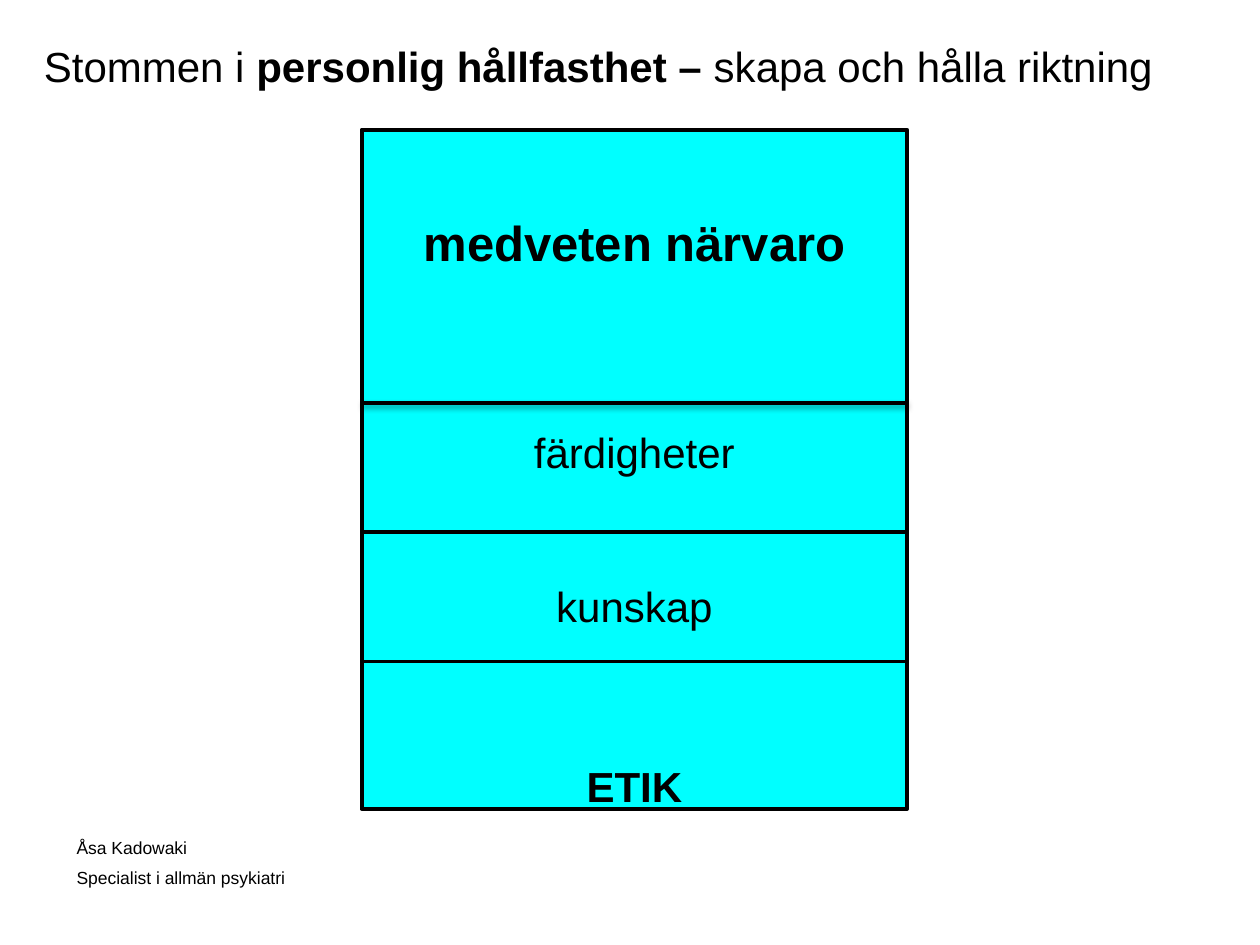
import pptx
import pptx.util
import pptx.dml.color
import pptx.enum.shapes
import pptx.enum.text
import pptx.oxml
import pptx.oxml.ns
from pptx.util import Inches

COLORS = {"ink": "000000", "block": "00FFFF"}
SHADOW = (
    '<a:outerShdw blurRad="39370" dist="20320" dir="5400000" rotWithShape="0">'
    '<a:srgbClr val="{}"><a:alpha val="38000"/></a:srgbClr></a:outerShdw>'
)


def color(name):
    return pptx.dml.color.RGBColor.from_string(COLORS[name])


def add_span(para, text, size=24, bold=False, font="Arial", ink="ink"):
    span = para.add_run()
    span.text = text
    span.font.name = font
    span.font.size = pptx.util.Pt(size)
    span.font.bold = bold
    span.font.color.rgb = color(ink)


class Page:
    """Holds the slide and draws styled elements on it."""

    def __init__(self, deck):
        self.shapes = deck.slides.add_slide(deck.slide_layouts[6]).shapes

    def fill_frame(self, frame, paragraphs, align=None):
        for index, (gap, spans) in enumerate(paragraphs):
            para = frame.add_paragraph() if index else frame.paragraphs[0]
            para.alignment = align
            para.space_before = pptx.util.Pt(gap)
            for text, style in spans:
                add_span(para, text, **style)

    def text(self, left, top, width, height, paragraphs):
        box = self.shapes.add_textbox(Inches(left), Inches(top), Inches(width), Inches(height))
        box.text_frame.word_wrap = True
        box.text_frame.auto_size = pptx.enum.text.MSO_AUTO_SIZE.SHAPE_TO_FIT_TEXT
        self.fill_frame(box.text_frame, paragraphs)

    def block(self, left, top, width, height, inset, paragraphs):
        box = self.shapes.add_shape(
            pptx.enum.shapes.MSO_SHAPE.RECTANGLE,
            Inches(left), Inches(top), Inches(width), Inches(height))
        box.shadow.inherit = False
        box.fill.solid()
        box.fill.fore_color.rgb = color("block")
        box.line.color.rgb = color("ink")
        box.line.width = pptx.util.Pt(2.25)
        frame = box.text_frame
        frame.word_wrap = False
        frame.vertical_anchor = pptx.enum.text.MSO_ANCHOR.TOP
        frame.margin_top = Inches(inset)
        self.fill_frame(frame, paragraphs, pptx.enum.text.PP_ALIGN.CENTER)

    def divider(self, left, right, y, weight=2.25, shadow=""):
        line = self.shapes.add_connector(
            pptx.enum.shapes.MSO_CONNECTOR.STRAIGHT,
            Inches(left), Inches(y), Inches(right), Inches(y))
        line.line.color.rgb = color("ink")
        line.line.width = pptx.util.Pt(weight)
        effects = f'<a:effectLst {pptx.oxml.ns.nsdecls("a")}>{shadow}</a:effectLst>'
        line._element.spPr.append(pptx.oxml.parse_xml(effects))


def main():
    deck = pptx.Presentation()
    deck.slide_width, deck.slide_height = Inches(10), Inches(7.5)
    page = Page(deck)
    left, width = 2.87, 4.33
    right = left + width

    page.text(0.25, 0.27, 9.58, 0.5, [(0, [
        ("Stommen i ", {}),
        ("personlig hållfasthet – ", {"bold": True}),
        ("skapa och hålla riktning", {}),
    ])])
    page.block(left, 1.03, width, 5.39, 0.66, [
        (0, [("medveten närvaro", {"size": 28, "bold": True})]),
        (88.5, [("färdigheter", {})]),
        (59, [("kunskap", {})]),
        (74, [("ETIK", {"bold": True})]),
    ])
    for y in (4.22, 5.25):
        page.divider(left, right, y)
    page.text(0.51, 6.59, 2.2, 0.52, [
        (0, [("Åsa Kadowaki", {"size": 10})]),
        (5.5, [("Specialist i allmän psykiatri", {"size": 10})]),
    ])
    page.divider(left, right, 3.2, weight=2, shadow=SHADOW.format(COLORS["ink"]))
    deck.save("out.pptx")


if __name__ == "__main__":
    main()
